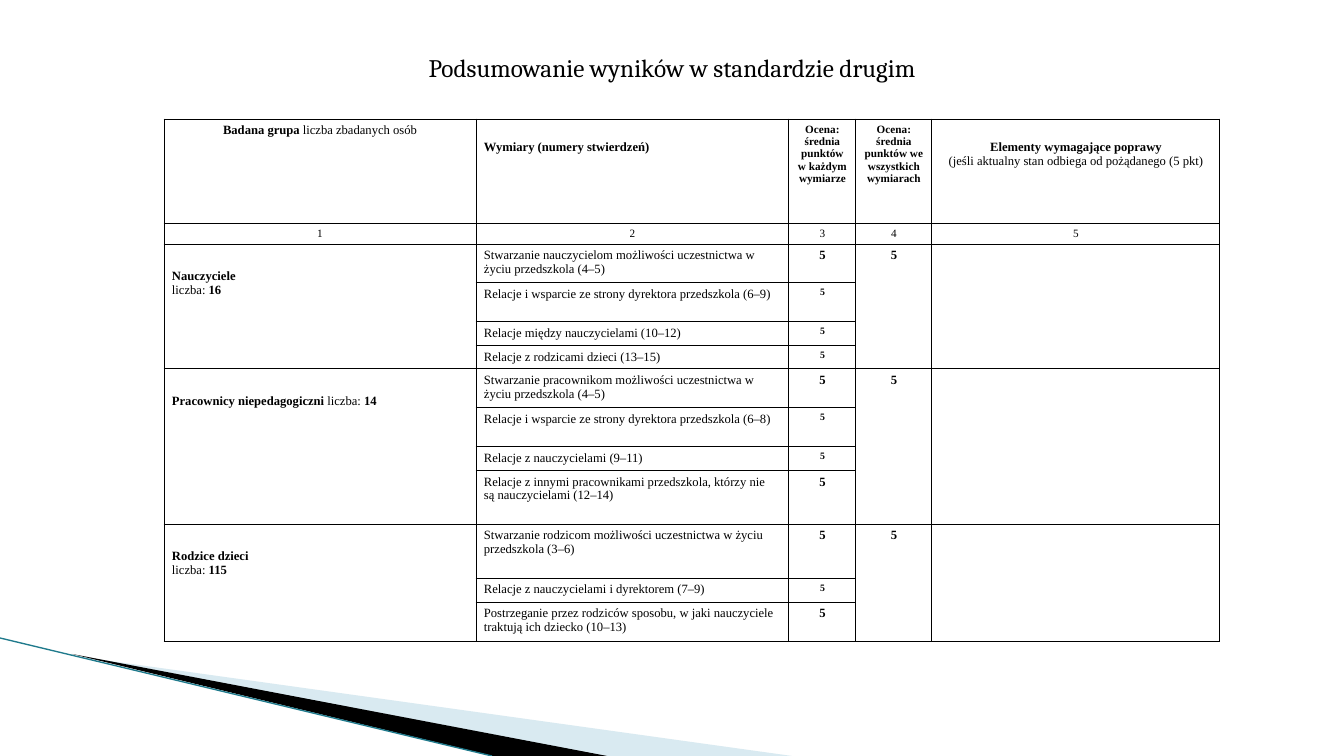
from lxml.etree import SubElement
from pptx import Presentation
from pptx.dml.color import RGBColor
from pptx.enum.shapes import MSO_CONNECTOR as CONN
from pptx.enum.text import MSO_ANCHOR as ANCHOR, PP_ALIGN as ALIGN
from pptx.oxml import parse_xml
from pptx.oxml.ns import nsdecls, qn
from pptx.util import Pt

PX = 9071
WIDE, HIGH = 1344, 756
BLACK = RGBColor(0, 0, 0)
PALE = RGBColor(0xA0, 0xCB, 0xDC)
TEAL = RGBColor(0x1F, 0x7A, 0x8C)
SERIF = "Times New Roman"
LEFT, MID = ALIGN.LEFT, ALIGN.CENTER

COLS = [312, 313, 67, 76, 288]
# Text between asterisks is bold; each header has its size, alignment, top inset.
HEADS = [
    (["*Badana grupa* liczba zbadanych osób"], 9, MID, 4),
    (["*Wymiary (numery stwierdzeń)*"], 9, LEFT, 21),
    (["*Ocena: średnia punktów w każdym wymiarze*"], 8, MID, 4),
    (["*Ocena: średnia punktów we wszystkich wymiarach*"], 8, MID, 4),
    (["*Elementy wymagające poprawy*",
      "(jeśli aktualny stan odbiega od pożądanego (5 pkt)"], 9, MID, 21),
]
# Each group: its label, then (row height, score size, lines of the dimension).
GROUPS = [
    (["*Nauczyciele*", "liczba: *16*"], [
        (39, 9, ["Stwarzanie nauczycielom możliwości uczestnictwa w",
                 "życiu przedszkola (4–5)"]),
        (39, 7, ["Relacje i wsparcie ze strony dyrektora przedszkola (6–9)"]),
        (24, 7, ["Relacje między nauczycielami (10–12)"]),
        (23, 7, ["Relacje z rodzicami dzieci (13–15)"]),
    ]),
    (["*Pracownicy niepedagogiczni* liczba: *14*"], [
        (39, 9, ["Stwarzanie pracownikom możliwości uczestnictwa w",
                 "życiu przedszkola (4–5)"]),
        (39, 7, ["Relacje i wsparcie ze strony dyrektora przedszkola (6–8)"]),
        (24, 7, ["Relacje z nauczycielami (9–11)"]),
        (54, 9, ["Relacje z innymi pracownikami przedszkola, którzy nie",
                 "są nauczycielami (12–14)"]),
    ]),
    (["*Rodzice dzieci*", "liczba: *115*"], [
        (54, 9, ["Stwarzanie rodzicom możliwości uczestnictwa w życiu",
                 "przedszkola (3–6)"]),
        (24, 7, ["Relacje z nauczycielami i dyrektorem (7–9)"]),
        (39, 9, ["Postrzeganie przez rodziców sposobu, w jaki nauczyciele "
                 "traktują ich dziecko (10–13)"]),
    ]),
]


def wedge(slide, points, color, alpha=None):
    form = slide.shapes.build_freeform(*points[0], scale=PX)
    form.add_line_segments(points[1:])
    shape = form.convert_to_shape()
    shape.shadow.inherit = False
    shape.fill.solid()
    shape.fill.fore_color.rgb = color
    shape.line.fill.background()
    if alpha:
        tint = shape._element.spPr.find(".//" + qn("a:srgbClr"))
        SubElement(tint, qn("a:alpha"), val=str(alpha * 1000))


def corner(slide, x, y, w, h):
    """Draw the swoosh that fills the lower left corner."""
    end = y + h
    wedge(slide, [(x + 74, y + 18), (x + w, end), (x + 605, end)], PALE, 40)
    wedge(slide, [(x + 72, y + 16), (x + 607, end), (x + 493, end)], BLACK)
    edge = slide.shapes.add_connector(
        CONN.STRAIGHT, x * PX, y * PX, (x + 492) * PX, end * PX)
    edge.line.color.rgb = TEAL
    edge.line.width = Pt(0.95)
    SubElement(edge._element.spPr, qn("a:effectLst"))


def border(cell):
    props = cell._tc.get_or_add_tcPr()
    for at, side in enumerate("LRTB"):
        props.insert(at, parse_xml(
            f'<a:ln{side} {nsdecls("a")} w="9525"><a:solidFill>'
            f'<a:srgbClr val="{BLACK}"/></a:solidFill></a:ln{side}>'))


def write(cell, lines, size=9, align=LEFT, top=4):
    cell.margin_top = top * PX
    frame = cell.text_frame
    for at, line in enumerate(lines):
        para = frame.add_paragraph() if at else frame.paragraphs[0]
        para.alignment = align
        for turn, part in enumerate(line.split("*")):
            if part:
                run = para.add_run()
                run.text = part
                font = run.font
                font.name, font.size = SERIF, Pt(size)
                font.bold = turn % 2 == 1
                font.color.rgb = BLACK


def results(slide, x, y, w, h):
    rows = [104, 21] + [row[0] for _, part in GROUPS for row in part]
    table = slide.shapes.add_table(
        len(rows), len(COLS), x * PX, y * PX, w * PX, h * PX).table
    table.first_row = table.horz_banding = False
    for col, size in zip(table.columns, COLS):
        col.width = size * PX
    for row, size in zip(table.rows, rows):
        row.height = size * PX
    for cell in table.iter_cells():
        cell.margin_left = cell.margin_right = 8 * PX
        cell.margin_top = cell.margin_bottom = 4 * PX
        cell.fill.background()
        border(cell)

    for at, head in enumerate(HEADS):
        write(table.cell(0, at), *head)
        write(table.cell(1, at), [str(at + 1)], 8, MID)
    first = 2
    for label, part in GROUPS:
        last = first + len(part) - 1
        for col in (0, 3, 4):
            table.cell(first, col).merge(table.cell(last, col))
        write(table.cell(first, 0), label, top=25)
        write(table.cell(first, 3), ["*5*"], align=MID)
        for at, (_, size, lines) in enumerate(part, first):
            write(table.cell(at, 1), lines)
            write(table.cell(at, 2), ["*5*"], size, MID)
        first = last + 1


def heading(slide, x, y, w, h):
    title = slide.shapes.title
    title.left, title.top = x * PX, y * PX
    title.width, title.height = w * PX, h * PX
    frame = title.text_frame
    frame.text = "Podsumowanie wyników w standardzie drugim"
    frame.vertical_anchor = ANCHOR.TOP
    para = frame.paragraphs[0]
    para.alignment = MID
    font = para.runs[0].font
    font.name, font.size = "Cambria", Pt(18)
    font.color.rgb = BLACK


def main():
    deck = Presentation()
    deck.slide_width, deck.slide_height = WIDE * PX, HIGH * PX
    slide = deck.slides.add_slide(deck.slide_layouts[5])
    corner(slide, 0, 638, 792, 118)
    results(slide, 164, 119, sum(COLS), 523)
    heading(slide, 0, 47, WIDE, 71)
    deck.save("out.pptx")


if __name__ == "__main__":
    main()
